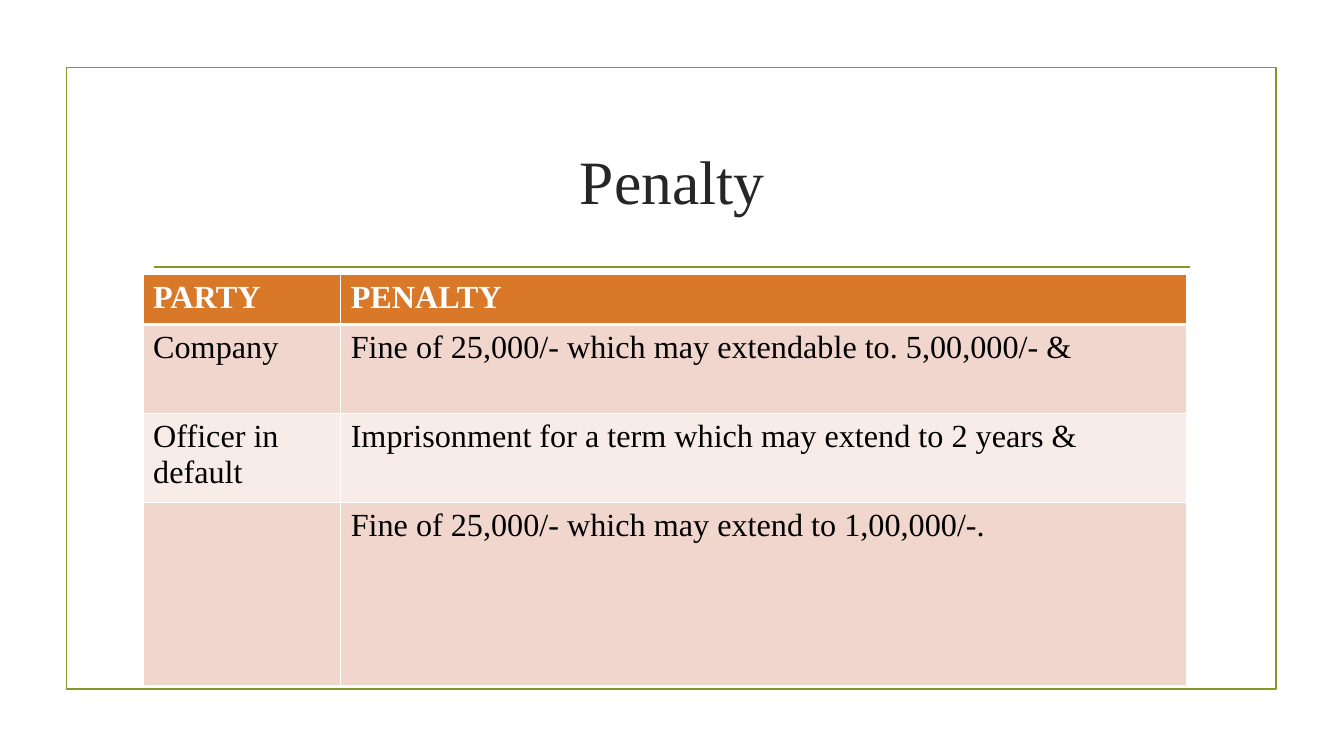
import dataclasses

import pptx
import pptx.dml.color
import pptx.enum.shapes
import pptx.enum.text
import pptx.oxml
import pptx.oxml.ns
import pptx.util

Cm = pptx.util.Cm
Pt = pptx.util.Pt
MSO_ANCHOR = pptx.enum.text.MSO_ANCHOR
PP_ALIGN = pptx.enum.text.PP_ALIGN


@dataclasses.dataclass(frozen=True)
class Theme:
    """Colours, font and sizes of the slide."""
    font: str = "Times New Roman"
    title_size: float = 44
    table_size: float = 23
    line_width: float = 1.25
    grid_width: float = 1
    header_rule: float = 3
    olive: str = "83992A"
    title: str = "262626"
    black: str = "000000"
    white: str = "FFFFFF"
    header: str = "D97828"
    bands: tuple = ("F1D6CD", "F8ECE8")


THEME = Theme()
COLUMNS = (4.98, 21.31)
ROWS = (1.27, 2.24, 2.24, 4.62)
PENALTIES = (
    ("PARTY", "PENALTY"),
    ("Company", "Fine of 25,000/- which may extendable to. 5,00,000/- &"),
    ("Officer in default", "Imprisonment for a term which may extend to 2 years &"),
    ("", "Fine of 25,000/- which may extend to 1,00,000/-."),
)


def rgb(value):
    """Return the colour for a hex string."""
    return pptx.dml.color.RGBColor.from_string(value)


def write_text(tf, text, size=THEME.table_size, color=THEME.black, bold=False,
               align=PP_ALIGN.LEFT, anchor=MSO_ANCHOR.TOP):
    """Write one formatted paragraph into a text frame."""
    tf.word_wrap = True
    tf.vertical_anchor = anchor
    p = tf.paragraphs[0]
    p.alignment = align
    r = p.add_run()
    r.text = text
    r.font.name = THEME.font
    r.font.size = Pt(size)
    r.font.bold = bold
    r.font.color.rgb = rgb(color)


def style_line(line):
    """Apply the olive outline."""
    line.color.rgb = rgb(THEME.olive)
    line.width = Pt(THEME.line_width)


def add_frame(s, left, top, width, height):
    """Add the unfilled border rectangle."""
    sp = s.shapes.add_shape(pptx.enum.shapes.MSO_SHAPE.RECTANGLE,
                            Cm(left), Cm(top), Cm(width), Cm(height))
    sp.shadow.inherit = False
    sp.fill.background()
    style_line(sp.line)


def add_rule(s, left, right, top):
    """Add a horizontal rule without shadow."""
    cx = s.shapes.add_connector(pptx.enum.shapes.MSO_CONNECTOR.STRAIGHT,
                                Cm(left), Cm(top), Cm(right), Cm(top))
    style_line(cx.line)
    pptx.oxml.ns.qn("a:effectLst")
    cx._element.spPr.append(pptx.oxml.parse_xml(
        f'<a:effectLst {pptx.oxml.ns.nsdecls("a")}/>'))


def add_title(s, text, left, top, width, height):
    """Add the centred title."""
    sp = s.shapes.add_textbox(Cm(left), Cm(top), Cm(width), Cm(height))
    write_text(sp.text_frame, text, size=THEME.title_size, color=THEME.title,
               align=PP_ALIGN.CENTER, anchor=MSO_ANCHOR.MIDDLE)


def set_borders(cell, **widths):
    """Draw white cell borders, given widths in points by side."""
    tc_pr = cell._tc.get_or_add_tcPr()
    for side in "LRTB":
        width = Pt(widths.get(side, THEME.grid_width))
        tc_pr.append(pptx.oxml.parse_xml(
            f'<a:ln{side} {pptx.oxml.ns.nsdecls("a")} w="{width}"><a:solidFill>'
            f'<a:srgbClr val="{THEME.white}"/></a:solidFill></a:ln{side}>'))


def style_cell(cell, text, row):
    """Fill, border and write one table cell."""
    header = row == 0
    rules = {0: {"B": THEME.header_rule}, 1: {"T": THEME.header_rule}}
    set_borders(cell, **rules.get(row, {}))
    cell.fill.solid()
    cell.fill.fore_color.rgb = rgb(THEME.header if header else THEME.bands[(row - 1) % 2])
    cell.margin_left = cell.margin_right = Cm(0.25)
    cell.margin_top = cell.margin_bottom = Cm(0.14)
    if text:
        write_text(cell.text_frame, text, bold=header,
                   color=THEME.white if header else THEME.black)


def add_penalty_table(s, left, top):
    """Add the table of penalties by party."""
    table = s.shapes.add_table(len(ROWS), len(COLUMNS), Cm(left), Cm(top),
                               Cm(sum(COLUMNS)), Cm(sum(ROWS))).table
    for column, width in zip(table.columns, COLUMNS):
        column.width = Cm(width)
    for i, height in enumerate(ROWS):
        table.rows[i].height = Cm(height)
        for j, text in enumerate(PENALTIES[i]):
            style_cell(table.cell(i, j), text, i)


def main():
    """Build and save the slide."""
    prs = pptx.Presentation()
    prs.slide_width, prs.slide_height = Cm(33.87), Cm(19.05)
    s = prs.slides.add_slide(prs.slide_layouts[6])
    add_frame(s, 1.68, 1.7, 30.48, 15.67)
    add_rule(s, 3.89, 30, 6.73)
    add_title(s, "Penalty", 3.61, 2.72, 26.67, 3.63)
    add_penalty_table(s, 3.61, 6.91)
    prs.save("out.pptx")


if __name__ == "__main__":
    main()
